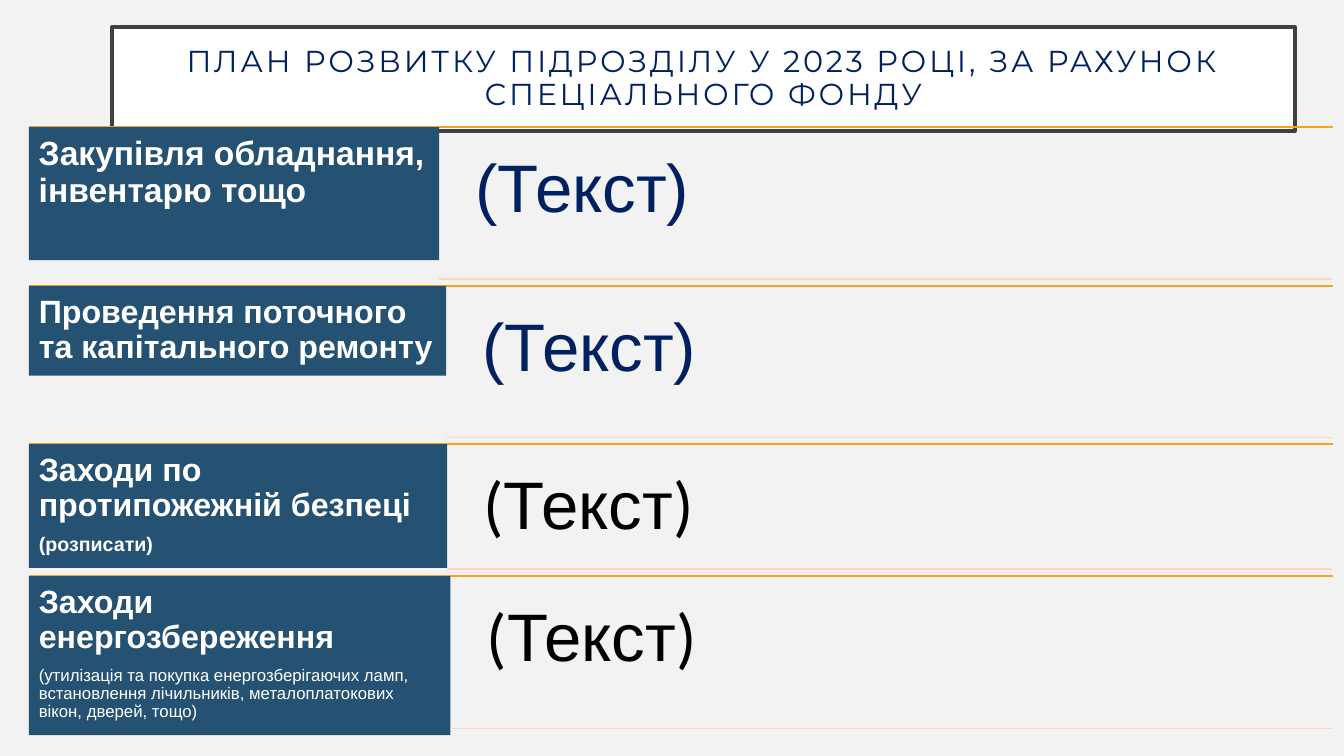
from lxml import etree
from pptx import Presentation
from pptx.dml.color import RGBColor
from pptx.enum.shapes import MSO_CONNECTOR, MSO_SHAPE
from pptx.enum.text import MSO_ANCHOR, PP_ALIGN
from pptx.oxml.ns import qn
from pptx.util import Pt

RECTANGLE = MSO_SHAPE.RECTANGLE
STRAIGHT = MSO_CONNECTOR.STRAIGHT
TOP, MIDDLE = MSO_ANCHOR.TOP, MSO_ANCHOR.MIDDLE
LEFT, CENTER = PP_ALIGN.LEFT, PP_ALIGN.CENTER

PAPER = RGBColor(0xF2, 0xF2, 0xF2)
WHITE = RGBColor(0xFF, 0xFF, 0xFF)
BLACK = RGBColor(0x00, 0x00, 0x00)
FRAME = RGBColor(0x40, 0x40, 0x40)
NAVY = RGBColor(0x00, 0x20, 0x60)
BLUE = RGBColor(0x25, 0x52, 0x72)
ORANGE = RGBColor(0xF6, 0xA2, 0x1D)
PEACH = RGBColor(0xFB, 0xD7, 0xBD)


def write(box, paragraphs, color, inset, anchor=TOP, align=LEFT, after=0, spacing=0):
    """Each paragraph is a list of (text, size, font, bold) runs."""
    frame = box.text_frame
    frame.word_wrap = True
    frame.vertical_anchor = anchor
    frame.margin_left = frame.margin_right = Pt(inset)
    frame.margin_top = frame.margin_bottom = Pt(inset)
    for index, runs in enumerate(paragraphs):
        para = frame.add_paragraph() if index else frame.paragraphs[0]
        para.alignment = align
        para.line_spacing = 0.9
        para.space_after = Pt(after)
        for text, size, font, bold in runs:
            span = para.add_run()
            span.text = text
            span.font.size = Pt(size)
            span.font.name = font
            span.font.bold = bold
            span.font.color.rgb = color
            if spacing:
                span.font._element.set("spc", str(spacing * 100))


def add_rule(left, right, y, color):
    rule = page.shapes.add_connector(STRAIGHT, Pt(left), Pt(y), Pt(right), Pt(y))
    rule.line.color.rgb = color
    rule.line.width = Pt(1)
    etree.SubElement(rule._element.spPr, qn("a:effectLst"))


deck = Presentation()
deck.slide_width, deck.slide_height = Pt(960), Pt(540)
page = deck.slides.add_slide(deck.slide_layouts[6])
page.background.fill.solid()
page.background.fill.fore_color.rgb = PAPER

# Title
title = page.shapes.add_shape(RECTANGLE, Pt(79.9), Pt(19.4), Pt(845.3), Pt(74.2))
title.shadow.inherit = False
title.fill.solid()
title.fill.fore_color.rgb = WHITE
title.line.color.rgb = FRAME
title.line.width = Pt(2.5)
heading = "ПЛАН РОЗВИТКУ ПІДРОЗДІЛУ У 2023 РОЦІ, ЗА РАХУНОК СПЕЦІАЛЬНОГО ФОНДУ"
write(title, [[(heading, 21.6, "Montserrat", False)]], NAVY, 14.4,
      anchor=MIDDLE, align=CENTER, spacing=2)

# Sections: top, bottom, label width, label height, heading size,
# heading, note (text, size, bold), bracket font, text colour
sections = [
    (90.8, 199.3, 293, 95, 24, "Закупівля обладнання, інвентарю тощо",
     None, "Arial", NAVY),
    (204.3, 312.5, 298, 64, 23, "Проведення поточного та капітального ремонту",
     None, "Arial", NAVY),
    (317.2, 406.3, 298.8, 88.5, 23, "Заходи по протипожежній безпеці",
     ("(розписати)", 14, True), "Calibri", BLACK),
    (411.5, 520.3, 301, 113.7, 23, "Заходи енергозбереження",
     ("(утилізація та покупка енергозберігаючих ламп, встановлення лічильників, "
      "металоплатокових вікон, дверей, тощо)", 12, False), "Calibri", BLACK),
]
LABEL_LEFT, TEXT_RIGHT = 20.7, 951.3

for top, bottom, width, height, size, name, note, bracket, color in sections:
    label_right = LABEL_LEFT + width
    add_rule(LABEL_LEFT, 952, top, ORANGE)

    # Blue label
    label = page.shapes.add_shape(RECTANGLE, Pt(LABEL_LEFT), Pt(top), Pt(width), Pt(height))
    label.shadow.inherit = False
    label.fill.solid()
    label.fill.fore_color.rgb = BLUE
    label.line.fill.background()
    paragraphs = [[(name, size, "Arial", True)]]
    if note:
        note_text, note_size, note_bold = note
        paragraphs.append([(note_text, note_size, "Arial", note_bold)])
    write(label, paragraphs, WHITE, 7, after=8)

    # Text to fill in
    text_left = label_right + 11.5
    box = page.shapes.add_textbox(Pt(text_left), Pt(top + 5.4),
                                  Pt(TEXT_RIGHT - text_left), Pt(bottom - top - 5.4))
    runs = [("(", 48, bracket, False), ("Текст", 48, "Arial", False),
            (")", 48, bracket, False)]
    if bracket == "Arial":
        runs = [("(Текст)", 48, "Arial", False)]
    write(box, [runs], color, 14.4, after=16.8)

    add_rule(label_right, TEXT_RIGHT, bottom, PEACH)

deck.save("out.pptx")
